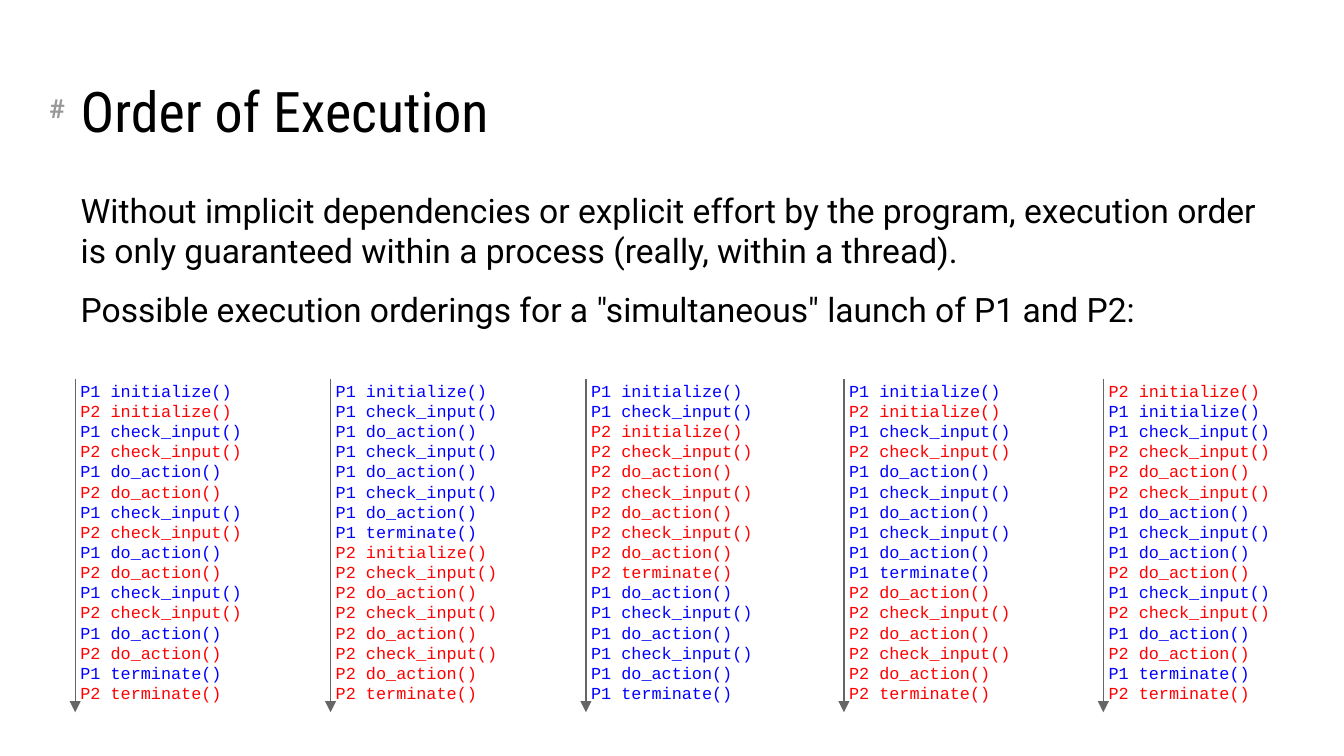
from pptx import Presentation, util as u
from pptx.dml.color import RGBColor
from pptx.enum import shapes, text
from pptx.oxml.ns import qn
from lxml import etree

TITLE = "Order of Execution"
BODY = [
    "Without implicit dependencies or explicit effort by the program, "
    "execution order is only guaranteed within a process (really, within a thread).",
    'Possible execution orderings for a "simultaneous" launch of P1 and P2:',
]
STEPS = ["initialize()"] + ["check_input()", "do_action()"] * 3 + ["terminate()"]
RUNS = [
    (36, "12" * 8),
    (172.8, "1" * 8 + "2" * 8),
    (309.6, "11" + "2" * 8 + "1" * 6),
    (447.8, "1212" + "1" * 6 + "2" * 6),
    (586.8, "2112221112121212"),
]
THEME = {
    "head": {"font": "Roboto Condensed", "size": 30, "color": "000000"},
    "body": {"font": "Roboto", "size": 18, "color": "000000"},
    "mark": {"font": "Roboto", "size": 14, "color": "999999", "bold": True},
    "code": {"font": "Courier New", "size": 9, "lead": u.Pt(10.8)},
    "1": "0000FF",
    "2": "FF0000",
    "line": "666666",
}


def place(shape, *box):
    shape.left, shape.top, shape.width, shape.height = map(u.Pt, box)
    return shape


def write(shape, lines, font, size, color=None, colors=None, bold=False,
          anchor=text.MSO_ANCHOR.TOP, lead=1.0, gap=0):
    frame = shape.text_frame
    frame.word_wrap = True
    frame.auto_size = text.MSO_AUTO_SIZE.NONE
    frame.vertical_anchor = anchor
    frame.margin_left = frame.margin_right = u.Pt(7.2)
    frame.margin_top = frame.margin_bottom = u.Pt(7.2)
    for i, line in enumerate(lines):
        para = frame.paragraphs[0] if i == 0 else frame.add_paragraph()
        para.alignment = text.PP_ALIGN.LEFT
        para.line_spacing = lead
        para.space_before = para.space_after = u.Pt(gap if i else 0)
        run = para.add_run()
        run.text = line
        run.font.name = font
        run.font.size = u.Pt(size)
        run.font.bold = bold
        run.font.color.rgb = RGBColor.from_string(colors[i] if colors else color)


def plain(shape):
    for para in shape.text_frame.paragraphs:
        props = para._p.get_or_add_pPr()
        props.set("marL", "0")
        props.set("indent", "0")
        etree.SubElement(props, qn("a:buNone"))


def arrow(slide, x, top, end):
    line = slide.shapes.add_connector(
        shapes.MSO_CONNECTOR.STRAIGHT, u.Pt(x), u.Pt(top), u.Pt(x), u.Pt(end))
    line.line.color.rgb = RGBColor.from_string(THEME["line"])
    line.line.width = u.Pt(0.75)
    etree.SubElement(line.line._get_or_add_ln(), qn("a:tailEnd"), type="triangle")
    etree.SubElement(line._element.spPr, qn("a:effectLst"))


def order(picks):
    left = {"1": iter(STEPS), "2": iter(STEPS)}
    return [f"P{p} {next(left[p])}" for p in picks]


def main():
    deck = Presentation()
    deck.slide_width, deck.slide_height = u.Pt(720), u.Pt(405)
    slide = deck.slides.add_slide(deck.slide_layouts[1])

    mark = slide.shapes.add_textbox(0, 0, 0, 0)
    write(place(mark, 19.4, 42.5, 22.3, 33.8), ["#"], **THEME["mark"])

    head = place(slide.shapes.title, 36, 16.6, 648, 67.7)
    write(head, [TITLE], anchor=text.MSO_ANCHOR.BOTTOM, **THEME["head"])

    body = place(slide.placeholders[1], 36, 94.3, 648, 87.1)
    write(body, BODY, gap=10, **THEME["body"])
    plain(body)

    for x, picks in RUNS:
        code = slide.shapes.add_textbox(0, 0, 0, 0)
        write(place(code, x, 196.6, 100.8, 180.7), order(picks),
              colors=[THEME[p] for p in picks], **THEME["code"])
        arrow(slide, x + 4.3, 203, 381.6)

    deck.save("out.pptx")


if __name__ == "__main__":
    main()
